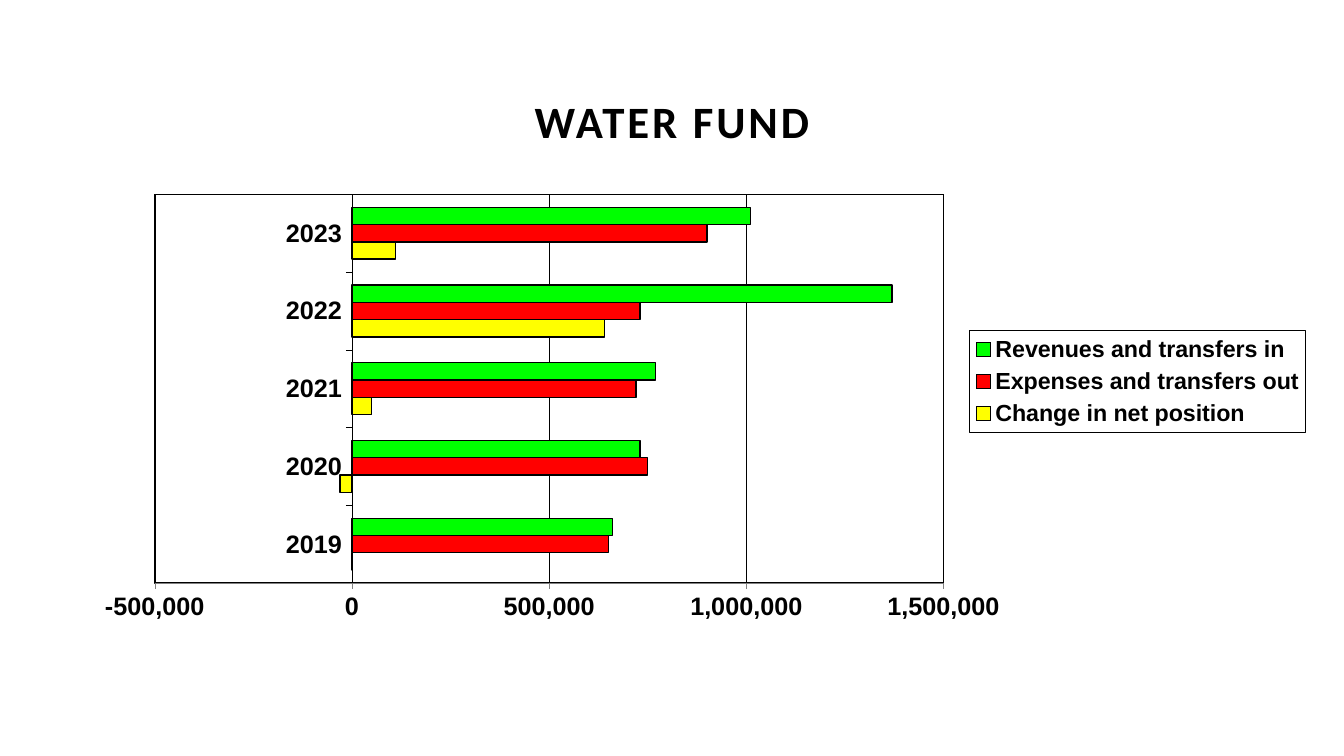
from lxml import etree
from pptx import Presentation
from pptx import util as u
from pptx.chart import data
from pptx.dml import color
from pptx.enum import chart as charts, text
from pptx.oxml import parse_xml
from pptx.oxml.ns import nsdecls, qn


def hex_colour(value):
    return color.RGBColor.from_string(value)


def write_text(frame, content, font, size, colour, bold=False, spacing=0, align=None):
    paragraph = frame.paragraphs[0]
    paragraph.alignment = align
    run = paragraph.add_run()
    run.text = content
    run.font.name = font
    run.font.size = u.Pt(size)
    run.font.bold = bold
    run.font.color.rgb = hex_colour(colour)
    run._r.get_or_add_rPr().set("spc", str(spacing * 100))


presentation = Presentation()
presentation.slide_width = u.Cm(33.87)
presentation.slide_height = u.Cm(19.05)
slide = presentation.slides.add_slide(presentation.slide_layouts[5])

title = slide.shapes.title
title.left, title.top = u.Cm(0.64), u.Cm(1.57)
title.width, title.height = u.Cm(32.59), u.Cm(2.92)
title.text_frame.vertical_anchor = text.MSO_ANCHOR.MIDDLE
write_text(title.text_frame, "WATER FUND", font="Calibri", size=32, colour="000000",
           bold=True, spacing=2, align=text.PP_ALIGN.CENTER)

fund_series = [
    ("Change in net position", "FFFF00", [0, -30000, 50000, 640000, 110000]),
    ("Expenses and transfers out", "FF0000", [650000, 750000, 720000, 730000, 900000]),
    ("Revenues and transfers in", "00FF00", [660000, 730000, 770000, 1370000, 1010000]),
]
chart_data = data.CategoryChartData(number_format="#,##0")
chart_data.categories = [str(year) for year in range(2019, 2024)]
for name, fill, values in fund_series:
    chart_data.add_series(name, values)

chart = slide.shapes.add_chart(
    charts.XL_CHART_TYPE.BAR_CLUSTERED, u.Cm(0.64), u.Cm(4.78),
    u.Cm(32.59), u.Cm(12.24), chart_data).chart
chart.has_title = False
chart.has_legend = True
legend = chart.legend
legend.position = charts.XL_LEGEND_POSITION.RIGHT
legend.include_in_layout = False

plot = chart.plots[0]
plot.gap_width = 150
plot.overlap = 0
plot.vary_by_categories = False
for series, (name, fill, values) in zip(plot.series, fund_series):
    series.invert_if_negative = False
    series.format.fill.solid()
    series.format.fill.fore_color.rgb = hex_colour(fill)
    series.format.line.color.rgb = hex_colour("000000")
    series.format.line.width = u.Pt(1)

category_axis, value_axis = chart.category_axis, chart.value_axis
value_axis.minimum_scale = -500000
value_axis.maximum_scale = 1500000
value_axis.major_unit = 500000
value_axis.has_major_gridlines = True
value_axis.tick_labels.number_format = "#,##0"
value_axis.tick_labels.number_format_is_linked = False
for axis in (category_axis, value_axis):
    axis.major_tick_mark = charts.XL_TICK_MARK.OUTSIDE
    axis.minor_tick_mark = charts.XL_TICK_MARK.NONE
for line, colour in ((category_axis.format.line, "000000"),
                     (value_axis.format.line, "808080"),
                     (value_axis.major_gridlines.format.line, "000000")):
    line.color.rgb = hex_colour(colour)
    line.width = u.Pt(0.25)

plot_area = chart._chartSpace.find(".//" + qn("c:plotArea"))
legend_box = chart._chartSpace.find(".//" + qn("c:legend"))
for element, position, target, bounds in (
        (plot_area, 0, "inner", (0.1, 0.01, 0.61, 0.8)),
        (legend_box, 1, None, (0.73, 0.29, 0.26, 0.21))):
    for previous in element.findall(qn("c:layout")):
        element.remove(previous)
    layout = parse_xml(f"<c:layout {nsdecls('c')}><c:manualLayout/></c:layout>")
    settings = [("xMode", "edge"), ("yMode", "edge"), *zip("xywh", bounds)]
    if target:
        settings.insert(0, ("layoutTarget", target))
    for tag, value in settings:
        etree.SubElement(layout[0], qn("c:" + tag)).set("val", str(value))
    element.insert(position, layout)
    element.append(parse_xml(
        f'<c:spPr {nsdecls("c", "a")}><a:noFill/><a:ln w="9525"><a:solidFill>'
        '<a:srgbClr val="000000"/></a:solidFill></a:ln></c:spPr>'))

for font, size in ((chart.font, 18), (category_axis.tick_labels.font, 18),
                   (value_axis.tick_labels.font, 18), (legend.font, 16.6)):
    font.name = "Arial"
    font.size = u.Pt(size)
    font.bold = True
    font.color.rgb = hex_colour("000000")

presentation.save("out.pptx")
